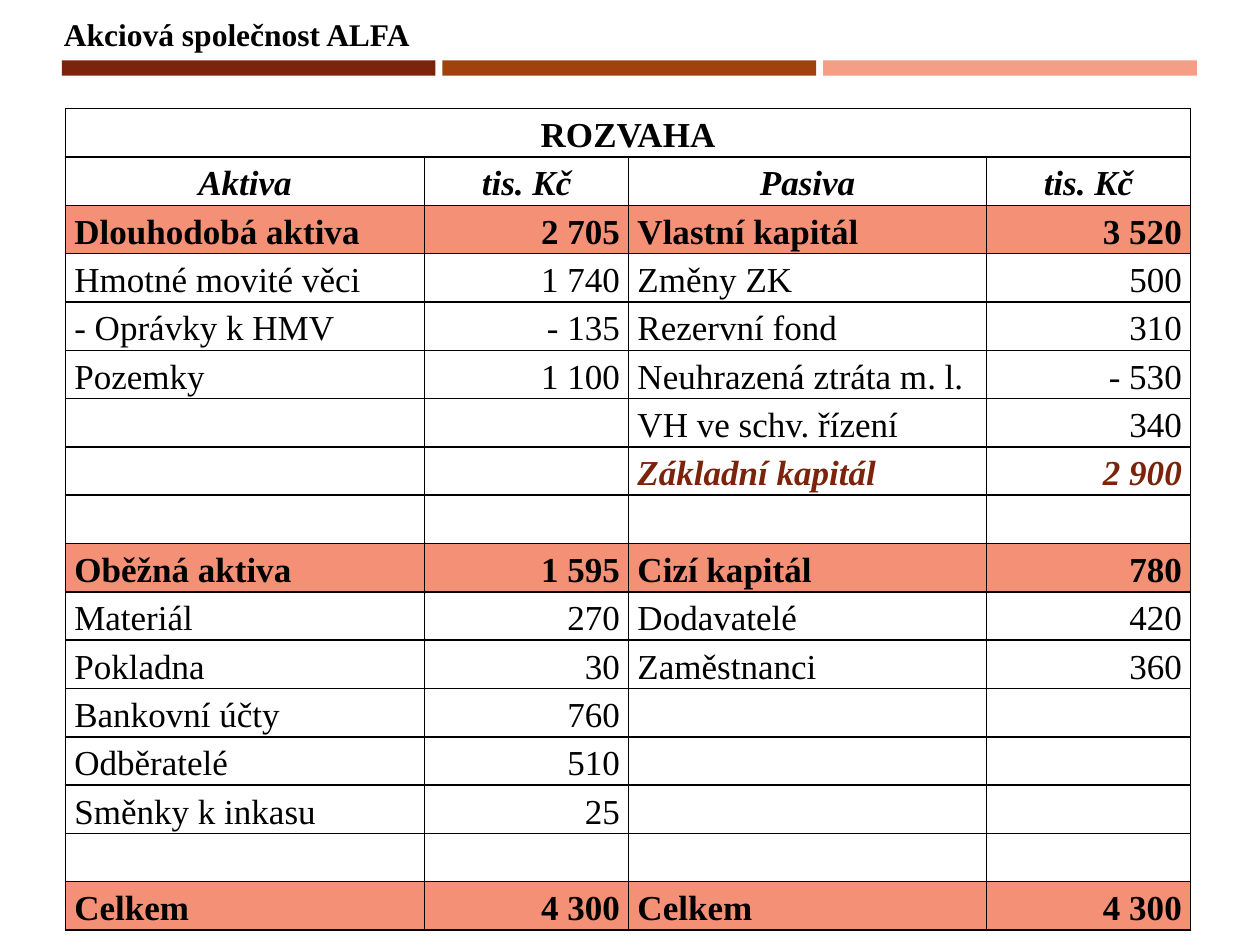
import dataclasses
import typing

import lxml.etree
import pptx
import pptx.dml.color
import pptx.enum.shapes
import pptx.enum.text
import pptx.oxml.ns
import pptx.util

WIDE = pptx.util.Inches(10)
HIGH = pptx.util.Inches(7.5)
FONT = "Times New Roman"
HUES = {"dark": "7B230B", "mid": "9F4210", "light": "F49E86",
        "band": "F39075", "ink": "000000"}
ALIGN = pptx.enum.text.PP_ALIGN
SIDES = (ALIGN.LEFT, ALIGN.RIGHT, ALIGN.JUSTIFY, ALIGN.RIGHT)
COLS = (2.85, 1.62, 2.84, 1.62)
EDGES = ("lnL", "lnR", "lnT", "lnB")
PAD = pptx.util.Inches(0.07)
CELL = {"margin_left": PAD, "margin_right": PAD, "margin_top": 0,
        "margin_bottom": 0,
        "vertical_anchor": pptx.enum.text.MSO_ANCHOR.MIDDLE}
PLAIN = {"name": FONT, "size": pptx.util.Pt(20), "bold": False, "italic": False}
BOLD = {**PLAIN, "bold": True}
SLANT = {**BOLD, "italic": True}
TITLE = {**BOLD, "size": pptx.util.Pt(18)}


@dataclasses.dataclass
class Box:
    left: float
    top: float
    width: float
    height: float

    def spans(self) -> tuple[int, ...]:
        return (int(self.left * WIDE), int(self.top * HIGH),
                int(self.width * WIDE), int(self.height * HIGH))


@dataclasses.dataclass
class Row:
    texts: tuple[str, ...] = ("", "", "", "")
    form: dict = dataclasses.field(default_factory=lambda: PLAIN)
    hue: str = "ink"
    fill: str = ""
    sides: tuple = SIDES


def head(*texts: str) -> Row:
    return Row(texts, SLANT, sides=(ALIGN.CENTER,) * 4)


def band(*texts: str) -> Row:
    return Row(texts, BOLD, fill="band")


ROWS = (
    Row(("ROZVAHA", "", "", ""), BOLD, sides=(ALIGN.CENTER,) * 4),
    head("Aktiva", "tis. Kč", "Pasiva", "tis. Kč"),
    band("Dlouhodobá aktiva", "2 705", "Vlastní kapitál", "3 520"),
    Row(("Hmotné movité věci", "1 740", "Změny ZK", "500")),
    Row(("- Oprávky k HMV", "- 135", "Rezervní fond", "310")),
    Row(("Pozemky", "1 100", "Neuhrazená ztráta m. l.", "- 530")),
    Row(("", "", "VH ve schv. řízení", "340")),
    Row(("", "", "Základní kapitál", "2 900"), SLANT, "dark"),
    Row(),
    band("Oběžná aktiva", "1 595", "Cizí kapitál", "780"),
    Row(("Materiál", "270", "Dodavatelé", "420")),
    Row(("Pokladna", "30", "Zaměstnanci", "360")),
    Row(("Bankovní účty", "760", "", "")),
    Row(("Odběratelé", "510", "", "")),
    Row(("Směnky k inkasu", "25", "", "")),
    Row(),
    band("Celkem", "4 300", "Celkem", "4 300"),
)


def apply(item: typing.Any, form: dict) -> None:
    for key, val in form.items():
        setattr(item, key, val)


def tint(name: str) -> pptx.dml.color.RGBColor:
    return pptx.dml.color.RGBColor.from_string(HUES[name])


def write(para: typing.Any, text: str, form: dict, hue: str) -> None:
    run = para.add_run()
    run.text = text
    apply(run.font, form)
    run.font.color.rgb = tint(hue)


def frame(cell: typing.Any) -> None:
    props = cell._tc.get_or_add_tcPr()
    name = pptx.oxml.ns.qn
    for edge in EDGES:
        line = lxml.etree.SubElement(props, name(f"a:{edge}"), w="12700")
        fill = lxml.etree.SubElement(line, name("a:solidFill"))
        lxml.etree.SubElement(fill, name("a:srgbClr"), val=HUES["ink"])


def draw_bar(slide: typing.Any, box: Box, hue: str) -> None:
    bar = slide.shapes.add_shape(
        pptx.enum.shapes.MSO_SHAPE.RECTANGLE, *box.spans())
    bar.shadow.inherit = False
    bar.fill.solid()
    bar.fill.fore_color.rgb = tint(hue)
    bar.line.fill.background()


def draw_title(slide: typing.Any, box: Box, text: str) -> None:
    body = slide.shapes.add_textbox(*box.spans()).text_frame
    body.word_wrap = False
    write(body.paragraphs[0], text, TITLE, "ink")


def draw_cell(cell: typing.Any, text: str, side: typing.Any, row: Row) -> None:
    apply(cell, CELL)
    frame(cell)
    if row.fill:
        cell.fill.solid()
        cell.fill.fore_color.rgb = tint(row.fill)
    else:
        cell.fill.background()
    para = cell.text_frame.paragraphs[0]
    apply(para, {"alignment": side, "line_spacing": 1.15})
    if text:
        write(para, text, row.form, row.hue)


def draw_table(slide: typing.Any, box: Box, rows: tuple[Row, ...]) -> None:
    spans = box.spans()
    grid = slide.shapes.add_table(len(rows), len(COLS), *spans).table
    apply(grid, {"first_row": False, "horz_banding": False})
    for col, share in zip(grid.columns, COLS):
        col.width = int(spans[2] * share / sum(COLS))
    for line, row in zip(grid.rows, rows):
        line.height = spans[3] // len(rows)
        for cell, text, side in zip(line.cells, row.texts, row.sides):
            draw_cell(cell, text, side, row)
    grid.cell(0, 0).merge(grid.cell(0, len(COLS) - 1))


def main() -> None:
    deck = pptx.Presentation()
    apply(deck, {"slide_width": WIDE, "slide_height": HIGH})
    slide = deck.slides.add_slide(deck.slide_layouts[6])
    left, width, count = 0.049, 0.901, 3
    gap = 0.0055
    size = (width - gap * (count - 1)) / count
    for num, hue in enumerate(("dark", "mid", "light")):
        draw_bar(slide, Box(left + num * (size + gap), 0.064, size, 0.016), hue)
    draw_table(slide, Box(0.052, 0.115, 0.893, 0.87), ROWS)
    draw_title(slide, Box(0.041, 0.009, 0.297, 0.054), "Akciová společnost ALFA")
    deck.save("out.pptx")


if __name__ == "__main__":
    main()
